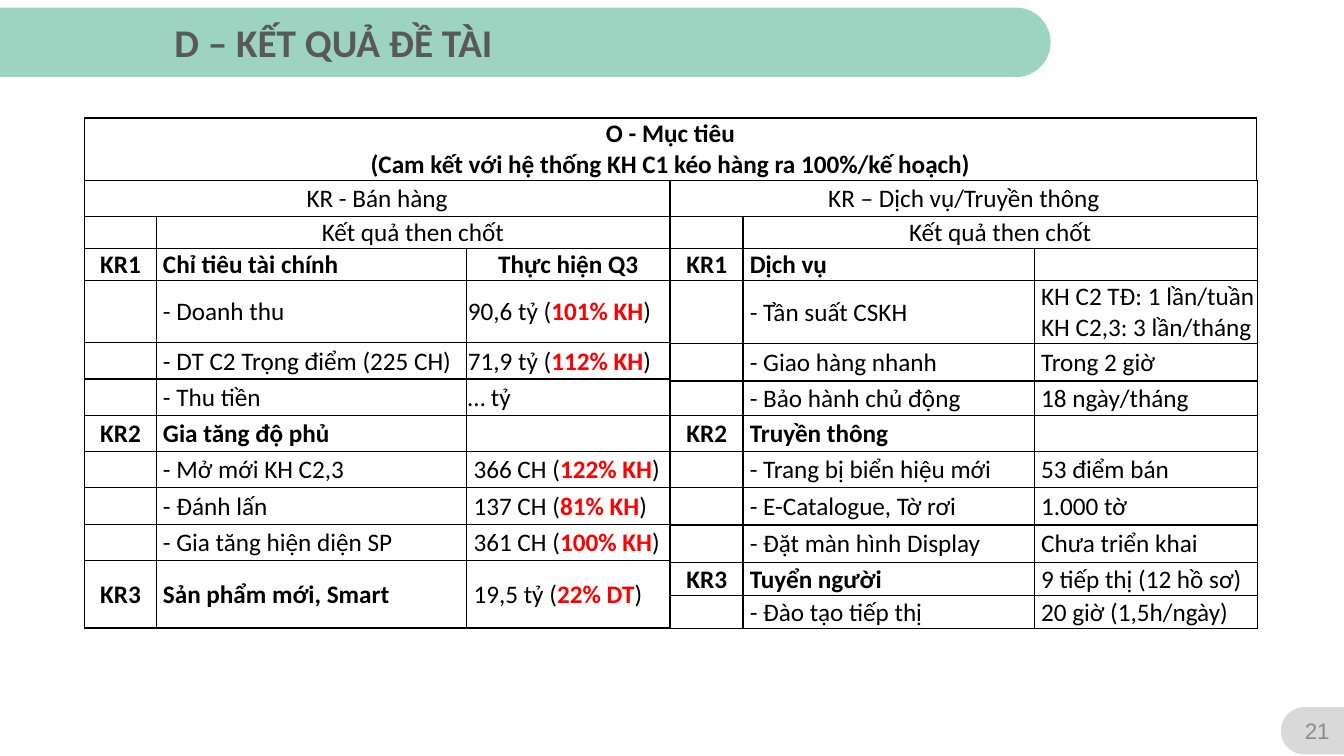
from lxml import etree
from pptx import Presentation
from pptx.dml.color import RGBColor
from pptx.enum.shapes import MSO_SHAPE
from pptx.enum.text import MSO_ANCHOR, MSO_AUTO_SIZE, PP_ALIGN
from pptx.oxml.ns import qn
from pptx.util import Inches, Pt

ROUND_TAB = MSO_SHAPE.ROUND_2_SAME_RECTANGLE
MIDDLE, TOP = MSO_ANCHOR.MIDDLE, MSO_ANCHOR.TOP
LEFT, CENTER = PP_ALIGN.LEFT, PP_ALIGN.CENTER
GROW, FIXED = MSO_AUTO_SIZE.SHAPE_TO_FIT_TEXT, MSO_AUTO_SIZE.NONE

WIDTH, HEIGHT = Inches(13.33), Inches(7.5)
COLORS = {
    "banner": "9CD4C1", "page_tab": "D9D9D9", "page_number": "8C8C8C",
    "title": "595959", "text": "000000", "result": "FF0000",
    "cell": "FFFFFF", "border": "000000",
}

# Rows of the two tables: key, item, result; *...* marks a highlighted share
SALES = [
    ("KR1", " Chỉ tiêu tài chính", "Thực hiện Q3"),
    ("", " - Doanh thu", "90,6 tỷ (*101% KH*)"),
    ("", " - DT C2 Trọng điểm (225 CH)", "71,9 tỷ (*112% KH*)"),
    ("", " - Thu tiền", "… tỷ"),
    ("KR2", " Gia tăng độ phủ", ""),
    ("", " - Mở mới KH C2,3", " 366 CH (*122% KH*)"),
    ("", " - Đánh lấn", " 137 CH (*81% KH*)"),
    ("", " - Gia tăng hiện diện SP", " 361 CH (*100% KH*)"),
    ("KR3", " Sản phẩm mới, Smart", " 19,5 tỷ (*22% DT*)"),
]
SERVICE = [
    ("KR1", " Dịch vụ", ""),
    ("", " - Tần suất CSKH", " KH C2 TĐ: 1 lần/tuần\n KH C2,3: 3 lần/tháng"),
    ("", " - Giao hàng nhanh", " Trong 2 giờ"),
    ("", " - Bảo hành chủ động", " 18 ngày/tháng"),
    ("KR2", " Truyền thông", ""),
    ("", " - Trang bị biển hiệu mới", " 53 điểm bán"),
    ("", " - E-Catalogue, Tờ rơi", " 1.000 tờ"),
    ("", " - Đặt màn hình Display", " Chưa triển khai"),
    ("KR3", " Tuyển người", " 9 tiếp thị (12 hồ sơ)"),
    ("", " - Đào tạo tiếp thị", " 20 giờ (1,5h/ngày)"),
]
SALES_HEIGHTS = [4.8, 4.13, 4.13, 8.27] + [4.8] * 6 + [8.93]
SERVICE_HEIGHTS = [4.8, 4.13, 4.13, 8.4, 4.93, 4.53, 4.8, 4.8, 4.93, 4.93, 4.4, 4.4]


def across(percent):
    """Share of the slide's width."""
    return round(WIDTH * percent / 100)


def down(percent):
    """Share of the slide's height."""
    return round(HEIGHT * percent / 100)


def color(name):
    return RGBColor.from_string(COLORS[name])


def add_run(p, text, size, fill, bold=False, font="Calibri"):
    r = p.add_run()
    r.text = text
    r.font.name, r.font.size, r.font.bold = font, Pt(size), bold
    r.font.color.rgb = color(fill)


def add_tab(slide, left, top, width, height, rotation, fill):
    """Bar with one rounded end; the box is the one seen after turning."""
    x, y, w, h = across(left), down(top), across(width), down(height)
    shift = (w - h) // 2
    s = slide.shapes.add_shape(ROUND_TAB, x + shift, y - shift, h, w)
    s.rotation = rotation
    s.adjustments[0], s.adjustments[1] = 0.5, 0
    s.shadow.inherit = False
    s.fill.solid()
    s.fill.fore_color.rgb = color(fill)
    s.line.fill.background()


def add_text(slide, left, top, width, height, text, size, fill, bold=False,
             font="Calibri", align=LEFT, anchor=TOP, fit=FIXED):
    box = slide.shapes.add_textbox(across(left), down(top), across(width), down(height))
    tf = box.text_frame
    tf.word_wrap, tf.auto_size, tf.vertical_anchor = True, fit, anchor
    p = tf.paragraphs[0]
    p.alignment = align
    add_run(p, text, size, fill, bold, font)


def add_borders(cell):
    props = cell._tc.get_or_add_tcPr()
    for i, side in enumerate(("lnL", "lnR", "lnT", "lnB")):
        ln = etree.Element(qn(f"a:{side}"), w=str(Pt(1)))
        fill = etree.SubElement(ln, qn("a:solidFill"))
        etree.SubElement(fill, qn("a:srgbClr"), val=COLORS["border"])
        props.insert(i, ln)


def add_grid(slide, left, top, widths, heights):
    """Plain white table with thin black borders."""
    table = slide.shapes.add_table(
        len(heights), len(widths), across(left), down(top),
        across(sum(widths)), down(sum(heights))).table
    table.first_row = table.horz_banding = False
    for column, width in zip(table.columns, widths):
        column.width = across(width)
    for row, height in zip(table.rows, heights):
        row.height = down(height)
    for cell in table.iter_cells():
        cell.margin_left = cell.margin_right = cell.margin_top = Inches(0.01)
        cell.margin_bottom = 0
        cell.vertical_anchor = MIDDLE
        cell.fill.solid()
        cell.fill.fore_color.rgb = color("cell")
        add_borders(cell)
    return table


def write_cell(cell, text, bold=False, align=LEFT):
    p = cell.text_frame.paragraphs[0]
    p.alignment = align
    for n, line in enumerate(text.split("\n")):
        if n:
            p.add_line_break()
        for i, part in enumerate(line.split("*")):
            marked = i % 2 == 1
            if part:
                add_run(p, part, 18, "result" if marked else "text", bold or marked)


def add_key_results(slide, left, widths, heights, heading, rows):
    table = add_grid(slide, left, 23.87, widths, heights)
    # Two merged heading rows
    for row, first, text in ((0, 0, heading), (1, 1, "Kết quả then chốt")):
        table.cell(row, first).merge(table.cell(row, 2))
        write_cell(table.cell(row, first), text, align=CENTER)
    # A row with a key is a bold group row; the first one heads the results
    for row, (key, item, result) in enumerate(rows, start=2):
        head = row == 2
        write_cell(table.cell(row, 0), key, True, CENTER)
        write_cell(table.cell(row, 1), item, bool(key))
        write_cell(table.cell(row, 2), result, head, CENTER if head else LEFT)


def main():
    prs = Presentation()
    prs.slide_width, prs.slide_height = WIDTH, HEIGHT
    slide = prs.slides.add_slide(prs.slide_layouts[6])

    # Banner and page number
    add_tab(slide, 0, 1, 78.17, 9.2, 90, "banner")
    add_tab(slide, 95.3, 93.53, 4.8, 6.27, 270, "page_tab")
    add_text(slide, 96.17, 94, 3.68, 5.33, "21", 16, "page_number",
             font="Arial", align=CENTER, anchor=MIDDLE)

    # Objective, then its key results side by side
    objective = add_grid(slide, 6.3, 15.6, [87.17], [8.13])
    write_cell(objective.cell(0, 0),
               "O - Mục tiêu\n(Cam kết với hệ thống KH C1 kéo hàng ra 100%/kế hoạch)",
               True, CENTER)
    add_key_results(slide, 6.3, [5.33, 23.11, 15.08], SALES_HEIGHTS,
                    "KR - Bán hàng", SALES)
    add_key_results(slide, 49.89, [5.4, 21.68, 16.58], SERVICE_HEIGHTS,
                    "KR – Dịch vụ/Truyền thông", SERVICE)

    # Title
    add_text(slide, 12.23, 1.73, 60.62, 7.6, "D – KẾT QUẢ ĐỀ TÀI", 28, "title",
             bold=True, fit=GROW)

    prs.save("out.pptx")


if __name__ == "__main__":
    main()
